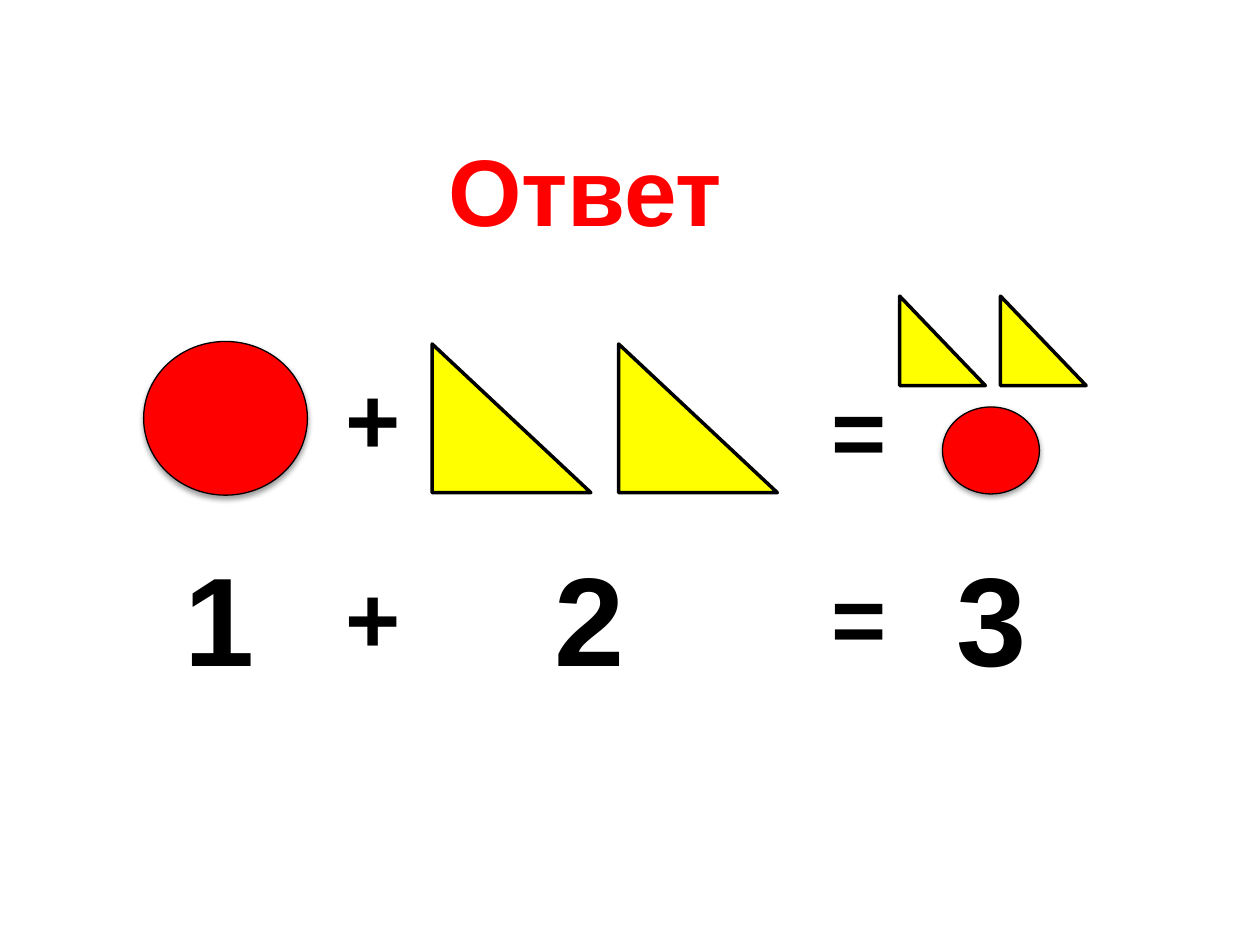
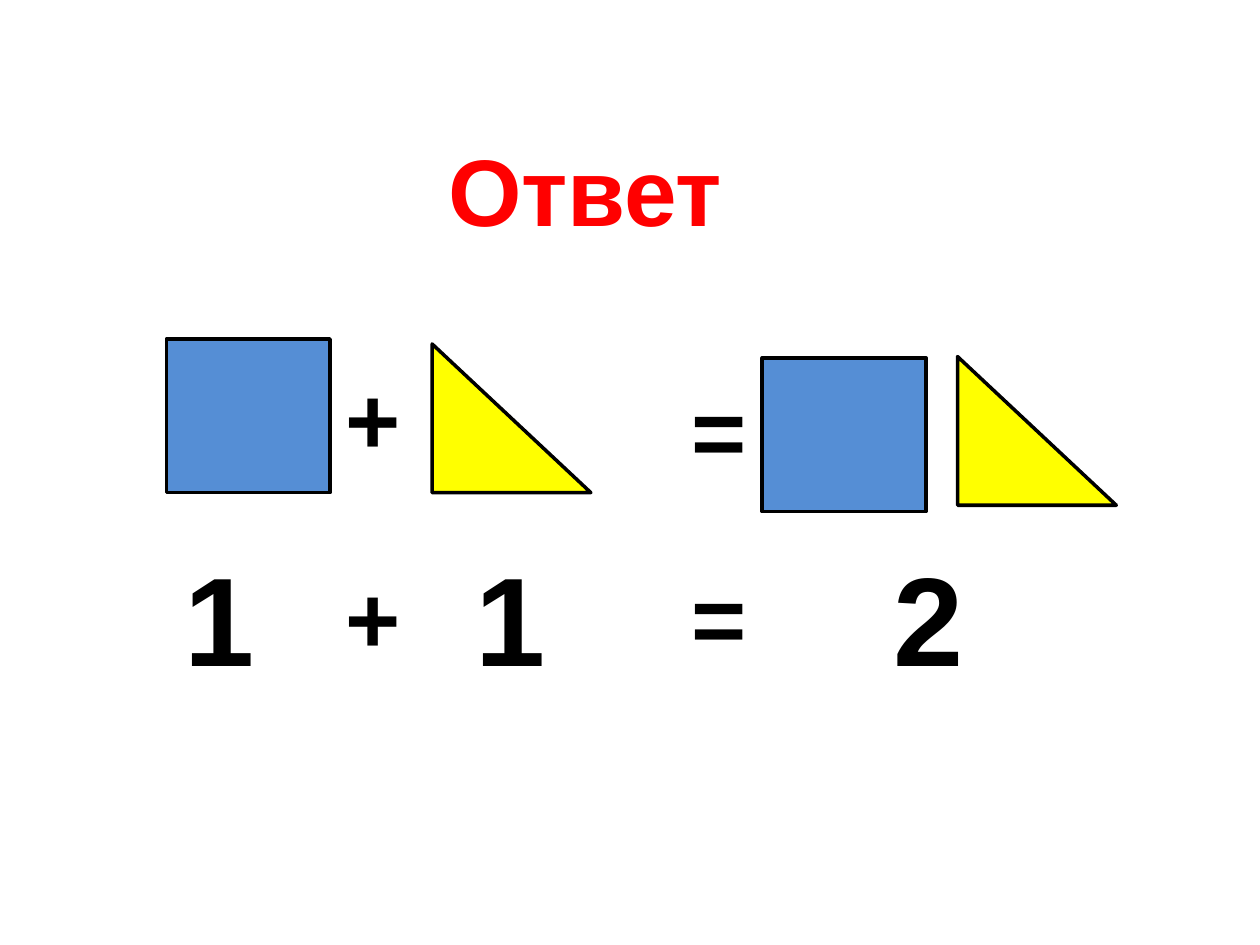
from lxml import etree
from pptx import Presentation
from pptx.dml.color import RGBColor
from pptx.enum import shapes, text
from pptx.oxml import parse_xml
from pptx.oxml.ns import qn
from pptx.util import Inches, Pt

COLORS = {"title": "FF0000", "ink": "000000", "circle": "FF0000",
          "triangle": "FFFF00", "square": "558ED5"}
KINDS = {"circle": shapes.MSO_SHAPE.OVAL,
         "triangle": shapes.MSO_SHAPE.RIGHT_TRIANGLE,
         "square": shapes.MSO_SHAPE.RECTANGLE}
SIZES = {"circle": (1.3, 1.22), "triangle": (1.26, 1.18), "square": (1.3, 1.22)}
SHADOW = (
    '<a:effectLst xmlns:a="http://schemas.openxmlformats.org/drawingml/2006/main">'
    '<a:outerShdw blurRad="40000" dist="20000" dir="5400000" rotWithShape="0">'
    '<a:srgbClr val="000000"><a:alpha val="38000"/></a:srgbClr>'
    '</a:outerShdw></a:effectLst>')


def write(sp, words, size, color):
    tf = sp.text_frame
    tf.text = words
    tf.word_wrap = False
    tf.auto_size = text.MSO_AUTO_SIZE.SHAPE_TO_FIT_TEXT
    tf.vertical_anchor = text.MSO_ANCHOR.TOP
    p = tf.paragraphs[0]
    p.alignment = text.PP_ALIGN.CENTER
    p.font.name, p.font.size, p.font.bold = "Arial", Pt(size), True
    p.font.color.rgb = RGBColor.from_string(COLORS[color])


def add_figure(s, kind, x, y, w, h):
    sp = s.shapes.add_shape(KINDS[kind], *map(Inches, (x, y, w, h)))
    sp.shadow.inherit = False
    sp.fill.solid()
    sp.fill.fore_color.rgb = RGBColor.from_string(COLORS[kind])
    sp.line.color.rgb = RGBColor.from_string(COLORS["ink"])
    if kind == "circle":
        sp.line.width = Pt(0.75)
        spPr = sp._element.spPr
        spPr.replace(spPr.find(qn("a:effectLst")), parse_xml(SHADOW))
    else:
        sp.line.width = Pt(2)
        etree.SubElement(sp.line._get_or_add_ln(), qn("a:round"))


# Each slide: figures (kind, x, y, optional size), left of "=", numbers (digit, x)
SLIDES = [
    {"figures": [("circle", 1.14, 2.71), ("triangle", 3.43, 2.73),
                 ("triangle", 4.91, 2.73),
                 ("triangle", 7.14, 2.35, 0.68, 0.71),
                 ("triangle", 7.94, 2.35, 0.68, 0.71),
                 ("circle", 7.48, 3.23, 0.77, 0.69)],
     "equals": 6.5,
     "numbers": [("1", 1.36), ("2", 4.3), ("3", 7.49)]},
    {"figures": [("square", 1.32, 2.69), ("triangle", 3.43, 2.73),
                 ("square", 6.05, 2.84), ("triangle", 7.6, 2.83)],
     "equals": 5.39,
     "numbers": [("1", 1.36), ("1", 3.67), ("2", 6.99)]},
]

prs = Presentation()
prs.slide_width, prs.slide_height = Inches(10), Inches(7.5)

for content in SLIDES:
    s = prs.slides.add_slide(prs.slide_layouts[5])

    # Title
    title = s.shapes.title
    title.left, title.top = Inches(3.34), Inches(1)
    title.width, title.height = Inches(2.61), Inches(1.01)
    write(title, "Ответ", 54, "title")

    # Row of figures
    for kind, x, y, *size in content["figures"]:
        add_figure(s, kind, x, y, *(size or SIZES[kind]))

    # Signs between the figures and between the numbers, then the numbers
    equals = content["equals"]
    labels = [("+", 2.64, 2.81, 0.64, 1.01, 54), ("=", equals, 2.9, 0.64, 1.01, 54),
              ("+", 2.64, 4.39, 0.64, 1.01, 54), ("=", equals, 4.39, 0.64, 1.01, 54)]
    labels += [(digit, x, 4.24, 0.76, 1.31, 72) for digit, x in content["numbers"]]
    for words, *box, size in labels:
        write(s.shapes.add_textbox(*map(Inches, box)), words, size, "ink")

prs.save("out.pptx")
